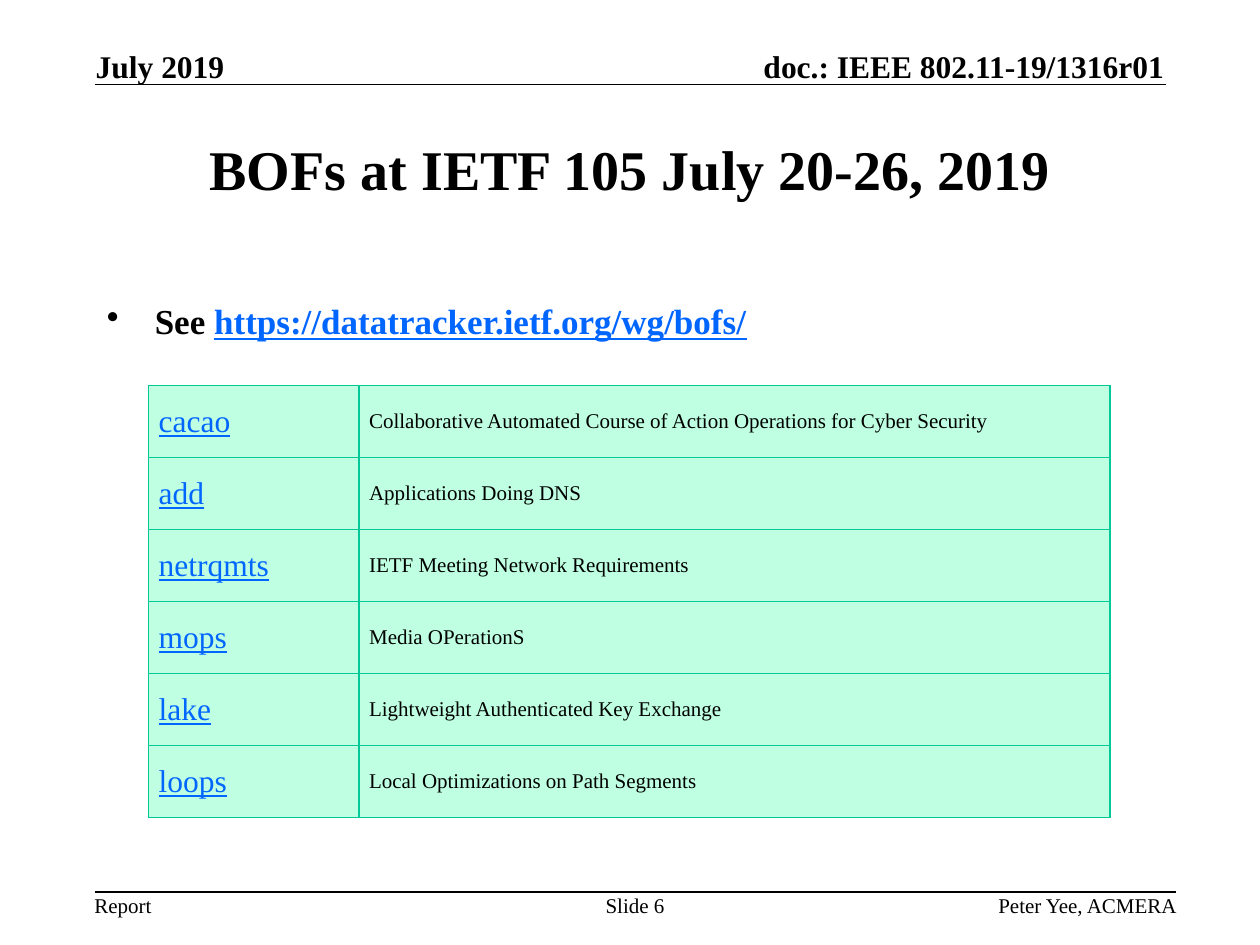
from dataclasses import dataclass

from lxml import etree
from pptx import Presentation
from pptx.dml.color import RGBColor
from pptx.enum import shapes, text
from pptx.oxml import ns
from pptx.util import Inches, Pt


@dataclass(frozen=True)
class Theme:
    font: str = "Times New Roman"
    ink: str = "000000"
    link: str = "0066FF"
    cell: str = "BFFFE2"
    border: str = "00C896"
    title: int = 32
    body: int = 20
    header: int = 18
    small: int = 12


THEME = Theme()
LEFT, CENTER, RIGHT = text.PP_ALIGN.LEFT, text.PP_ALIGN.CENTER, text.PP_ALIGN.RIGHT
TOP, MIDDLE, BOTTOM = (text.MSO_ANCHOR.TOP, text.MSO_ANCHOR.MIDDLE,
                       text.MSO_ANCHOR.BOTTOM)

BOFS = [
    ("cacao", "Collaborative Automated Course of Action Operations for Cyber Security"),
    ("add", "Applications Doing DNS"),
    ("netrqmts", "IETF Meeting Network Requirements"),
    ("mops", "Media OPerationS"),
    ("lake", "Lightweight Authenticated Key Exchange"),
    ("loops", "Local Optimizations on Path Segments"),
]


def add_run(p, words, size, bold=False, link=False):
    r = p.add_run()
    r.text = words
    r.font.name = THEME.font
    r.font.size = Pt(size)
    r.font.bold = bold
    r.font.underline = link
    r.font.color.rgb = RGBColor.from_string(THEME.link if link else THEME.ink)


def set_insets(box, x, y):
    box.margin_left = box.margin_right = Inches(x)
    box.margin_top = box.margin_bottom = Inches(y)


def add_textbox(s, left, top, width, height, align=LEFT, anchor=TOP, insets=(0, 0)):
    """Add an empty text box and return its first paragraph."""
    tf = s.shapes.add_textbox(Inches(left), Inches(top),
                              Inches(width), Inches(height)).text_frame
    tf.word_wrap = True
    tf.vertical_anchor = anchor
    set_insets(tf, *insets)
    p = tf.paragraphs[0]
    p.alignment = align
    return p


def add_rule(s, left, right, y):
    rule = s.shapes.add_connector(shapes.MSO_CONNECTOR.STRAIGHT, Inches(left),
                                  Inches(y), Inches(right), Inches(y))
    rule.line.color.rgb = RGBColor.from_string(THEME.ink)
    rule.line.width = Pt(1)
    etree.SubElement(rule._element.spPr, ns.qn("a:effectLst"))


def add_header(s):
    add_rule(s, 0.75, 9.25, 0.67)
    p = add_textbox(s, 0.76, 0.37, 2.07, 0.3, anchor=BOTTOM)
    add_run(p, "July 2019", THEME.header, bold=True)
    p = add_textbox(s, 5.24, 0.37, 4, 0.3, RIGHT, BOTTOM)
    add_run(p, "doc.: IEEE 802.11-19/1316r01", THEME.header, bold=True)


def add_footer(s):
    add_rule(s, 0.75, 9.33, 7.08)
    for words, left, align in (("Report", 0.75, LEFT), ("Slide 6", 4.04, CENTER),
                               ("Peter Yee, ACMERA", 7.34, RIGHT)):
        p = add_textbox(s, left, 7.08, 2, 0.2, align)
        add_run(p, words, THEME.small)


def set_title(s, words):
    title = s.shapes.title
    title.left, title.top = Inches(0.75), Inches(0.75)
    title.width, title.height = Inches(8.5), Inches(1.17)
    tf = title.text_frame
    tf.auto_size = text.MSO_AUTO_SIZE.NONE
    tf.vertical_anchor = MIDDLE
    set_insets(tf, 0.1, 0.05)
    p = tf.paragraphs[0]
    p.alignment = CENTER
    add_run(p, words, THEME.title, bold=True)


def add_link_bullet(s, lead, address):
    p = add_textbox(s, 0.75, 2.33, 8.92, 0.42, insets=(0.1, 0.05))
    pPr = p._p.get_or_add_pPr()
    pPr.set("marL", str(Inches(0.38)))
    pPr.set("indent", str(Inches(-0.38)))
    etree.SubElement(pPr, ns.qn("a:buChar"), char="•")
    add_run(p, lead, THEME.body, bold=True)
    add_run(p, address, THEME.body, bold=True, link=True)


def set_borders(cell):
    tcPr = cell._tc.get_or_add_tcPr()
    for i, side in enumerate(("lnL", "lnR", "lnT", "lnB")):
        ln = etree.Element(ns.qn(f"a:{side}"), w=str(Pt(0.75)))
        fill = etree.SubElement(ln, ns.qn("a:solidFill"))
        etree.SubElement(fill, ns.qn("a:srgbClr"), val=THEME.border)
        tcPr.insert(i, ln)


def fill_cell(cell, words, size, link):
    cell.fill.solid()
    cell.fill.fore_color.rgb = RGBColor.from_string(THEME.cell)
    cell.vertical_anchor = MIDDLE
    set_insets(cell, 0.08, 0.04)
    set_borders(cell)
    add_run(cell.text_frame.paragraphs[0], words, size, link=link)


def add_bof_table(s):
    table = s.shapes.add_table(len(BOFS), 2, Inches(1.18), Inches(3.06),
                               Inches(7.63), Inches(3.43)).table
    table.first_row = table.horz_banding = False
    for column, width in zip(table.columns, (1.67, 5.96)):
        column.width = Inches(width)
    for i, (name, topic) in enumerate(BOFS):
        fill_cell(table.cell(i, 0), name, THEME.header, link=True)
        fill_cell(table.cell(i, 1), topic, THEME.small, link=False)


def main():
    prs = Presentation()
    prs.slide_width, prs.slide_height = Inches(10), Inches(7.5)
    s = prs.slides.add_slide(prs.slide_layouts[5])
    add_header(s)
    add_footer(s)
    set_title(s, "BOFs at IETF 105 July 20-26, 2019")
    add_link_bullet(s, "See ", "https://datatracker.ietf.org/wg/bofs/")
    add_bof_table(s)
    prs.save("out.pptx")


if __name__ == "__main__":
    main()
